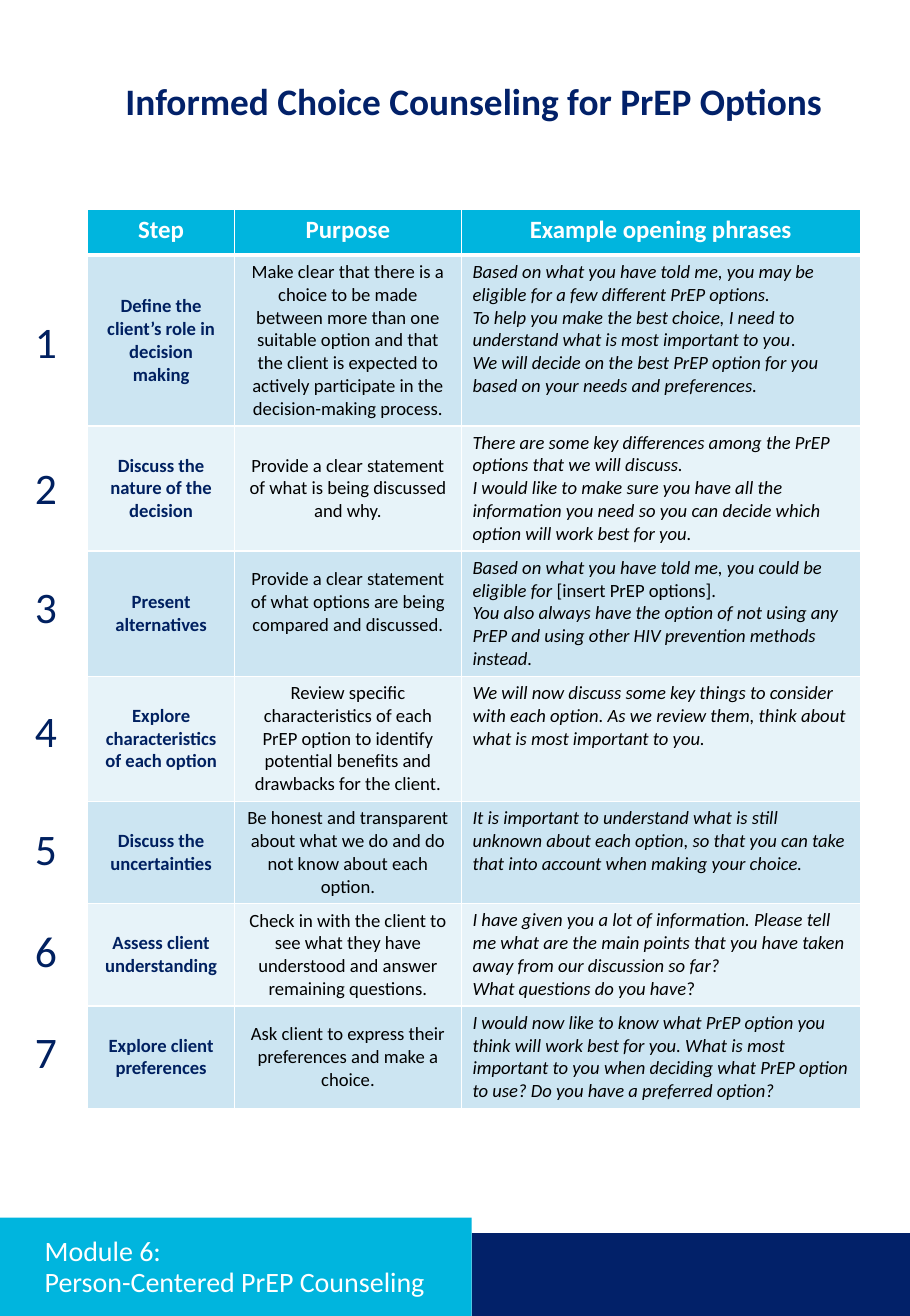
from lxml import etree
from pptx import Presentation
from pptx.dml.color import RGBColor
from pptx.enum.shapes import MSO_SHAPE
from pptx.enum.text import MSO_ANCHOR, MSO_AUTO_SIZE, PP_ALIGN
from pptx.oxml.ns import qn
from pptx.util import Pt

RECTANGLE = MSO_SHAPE.RECTANGLE
TOP, MIDDLE = MSO_ANCHOR.TOP, MSO_ANCHOR.MIDDLE
LEFT, CENTER = PP_ALIGN.LEFT, PP_ALIGN.CENTER
NO_FIT = MSO_AUTO_SIZE.NONE

NAVY = RGBColor(0x02, 0x21, 0x69)
DARK_BLUE = RGBColor(0x00, 0x20, 0x60)
CYAN = RGBColor(0x00, 0xB5, 0xDE)
WHITE = RGBColor(0xFF, 0xFF, 0xFF)
BLACK = RGBColor(0x00, 0x00, 0x00)
BANDS = RGBColor(0xCC, 0xE5, 0xF2), RGBColor(0xE7, 0xF3, 0xF9)

PAGE_WIDTH, PAGE_HEIGHT = 585, 846
LINE_HEIGHT, CELL_PADDING = 14.65, 3.6
HEADER_HEIGHT = 29.5
COLUMN_WIDTHS = 94.4, 145.8, 256.4
NUMBER_TOPS = 198.7, 293, 369.4, 449.3, 524.9, 590.4, 655.2

TITLE_FONT = {"name": "Calibri", "size": Pt(24), "bold": True, "color": NAVY}
MODULE_FONT = {"name": "Calibri", "size": Pt(18), "bold": False, "color": WHITE}
NUMBER_FONT = {"name": "Calibri", "size": Pt(28), "color": DARK_BLUE}
HEADER_FONT = {"name": "Calibri", "size": Pt(16), "bold": True, "color": WHITE}
STEP_FONT = {"name": "Calibri", "size": Pt(12), "bold": True, "color": DARK_BLUE}
PURPOSE_FONT = {"name": "Calibri", "size": Pt(12), "bold": False, "color": BLACK}
PHRASE_FONT = PURPOSE_FONT | {"italic": True}

HEADINGS = "Step", "Purpose", "Example opening phrases"
# Lines of text, step, purpose, phrases; text after "|" is upright.
STEPS = [
    (7, "Define the client’s role in decision making",
     "Make clear that there is a choice to be made between more than one suitable option "
     "and that the client is expected to actively participate in the decision-making process.",
     ["Based on what you have told me, you may be eligible for a few different PrEP options.",
      "To help you make the best choice, I need to understand what is most important to you|.",
      "We will decide on the best PrEP option for you based on your needs and preferences."]),
    (5, "Discuss the nature of the decision",
     "Provide a clear statement of what is being discussed and why.",
     ["There are some key differences among the PrEP options that we will discuss.",
      "I would like to make sure you have all the information you need so you can decide "
      "which option will work best for you."]),
    (5, "Present alternatives",
     "Provide a clear statement of what options are being compared and discussed.",
     ["Based on what you have told me, you could be eligible for |[insert PrEP options].",
      "You also always have the option of not using any PrEP and using other HIV prevention "
      "methods instead."]),
    (5, "Explore characteristics of each option",
     "Review specific characteristics of each PrEP option to identify potential benefits "
     "and drawbacks for the client.",
     ["We will now discuss some key things to consider with each option. As we review them, "
      "think about what is most important to you."]),
    (4, "Discuss the uncertainties",
     "Be honest and transparent about what we do and do not know about each option.",
     ["It is important to understand what is still unknown about each option, so that you "
      "can take that into account when making your choice."]),
    (4, "Assess client understanding",
     "Check in with the client to see what they have understood and answer remaining "
     "questions.",
     ["I have given you a lot of information. Please tell me what are the main points that "
      "you have taken away from our discussion so far?",
      "What questions do you have|?"]),
    (4, "Explore client preferences",
     "Ask client to express their preferences and make a choice.",
     ["I would now like to know what PrEP option you think will work best for you. What is "
      "most important to you when deciding what PrEP option to use? Do you have a preferred "
      "option?"]),
]


def format_font(font, values):
    for name, value in values.items():
        if name == "color":
            font.color.rgb = value
        else:
            setattr(font, name, value)


def write(frame, paragraphs, font, align, anchor=TOP, spacing=1.0):
    """Fill a text frame; "|" starts an upright span, a newline breaks the line."""
    frame.word_wrap = True
    frame.vertical_anchor = anchor
    for index, text in enumerate(paragraphs):
        para = frame.add_paragraph() if index else frame.paragraphs[0]
        para.alignment = align
        para.line_spacing = spacing
        para.space_before = Pt(0)
        for part, words in enumerate(text.split("|")):
            for line, piece in enumerate(words.split("\n")):
                if line:
                    para.add_line_break()
                span = para.add_run()
                span.text = piece
                format_font(span.font, font | {"italic": False} if part else font)


def place_title(page, left, top, width, height):
    box = page.shapes.title
    box.left, box.top, box.width, box.height = map(Pt, (left, top, width, height))
    box.text_frame.auto_size = NO_FIT
    write(box.text_frame, ["Informed Choice Counseling for PrEP Options"],
          TITLE_FONT, CENTER, spacing=0.9)


def add_borders(cell, top, bottom):
    """Draw white cell borders, 1 point wide at the sides."""
    properties = cell._tc.get_or_add_tcPr()
    for index, (side, width) in enumerate(zip("LRTB", (1, 1, top, bottom))):
        line = etree.Element(qn(f"a:ln{side}"), w=str(Pt(width)))
        fill = etree.SubElement(line, qn("a:solidFill"))
        etree.SubElement(fill, qn("a:srgbClr"), val=str(WHITE))
        properties.insert(index, line)


def fill_cell(cell, color, paragraphs, font, align, anchor, top=1, bottom=1):
    cell.fill.solid()
    cell.fill.fore_color.rgb = color
    write(cell.text_frame, paragraphs, font, align)
    cell.vertical_anchor = anchor
    add_borders(cell, top, bottom)


def add_steps_table(page, left, top):
    heights = [HEADER_HEIGHT] + [lines * LINE_HEIGHT + 2 * CELL_PADDING
                                 for lines, *_ in STEPS]
    frame = page.shapes.add_table(len(heights), len(COLUMN_WIDTHS), Pt(left), Pt(top),
                                  Pt(sum(COLUMN_WIDTHS)), Pt(sum(heights)))
    table = frame.table
    for column, width in zip(table.columns, COLUMN_WIDTHS):
        column.width = Pt(width)
    for row, height in zip(table.rows, heights):
        row.height = Pt(height)
    for column, heading in enumerate(HEADINGS):
        fill_cell(table.cell(0, column), CYAN, [heading], HEADER_FONT, CENTER, TOP, bottom=3)
    for row, (_, step, purpose, phrases) in enumerate(STEPS, 1):
        columns = (([step], STEP_FONT, CENTER, MIDDLE),
                   ([purpose], PURPOSE_FONT, CENTER, MIDDLE),
                   (phrases, PHRASE_FONT, LEFT, TOP))
        for column, content in enumerate(columns):
            fill_cell(table.cell(row, column), BANDS[(row - 1) % 2], *content,
                      top=3 if row == 1 else 1)
    # The purpose of step 3 sits half a line above the middle.
    table.cell(3, 1).margin_bottom = Pt(CELL_PADDING + LINE_HEIGHT)


def add_step_numbers(page, left, width, height):
    for number, top in enumerate(NUMBER_TOPS, 1):
        box = page.shapes.add_textbox(Pt(left), Pt(top), Pt(width), Pt(height))
        write(box.text_frame, [str(number)], NUMBER_FONT, CENTER)


def add_band(page, left, top, width, height, color):
    band = page.shapes.add_shape(RECTANGLE, Pt(left), Pt(top), Pt(width), Pt(height))
    band.shadow.inherit = False
    band.fill.solid()
    band.fill.fore_color.rgb = color
    band.line.fill.background()


def add_footer(page, top, module_width):
    navy_top = top + 10
    add_band(page, module_width, navy_top, PAGE_WIDTH - module_width,
             PAGE_HEIGHT - navy_top, NAVY)
    add_band(page, 0, top, module_width, PAGE_HEIGHT - top, CYAN)
    box = page.shapes.add_textbox(Pt(21.6), Pt(top + 14.3), Pt(278), Pt(36))
    write(box.text_frame, ["Module 6:\nPerson-Centered PrEP Counseling"],
          MODULE_FONT, LEFT, MIDDLE, 0.9)


def main():
    deck = Presentation()
    deck.slide_width, deck.slide_height = Pt(PAGE_WIDTH), Pt(PAGE_HEIGHT)
    page = deck.slides.add_slide(deck.slide_layouts[5])
    add_footer(page, top=782.8, module_width=303.3)
    place_title(page, 56.2, 50.2, 496.8, 36)
    add_steps_table(page, 56.4, 134.6)
    add_step_numbers(page, 14.8, 29.5, 41)
    deck.save("out.pptx")


if __name__ == "__main__":
    main()
